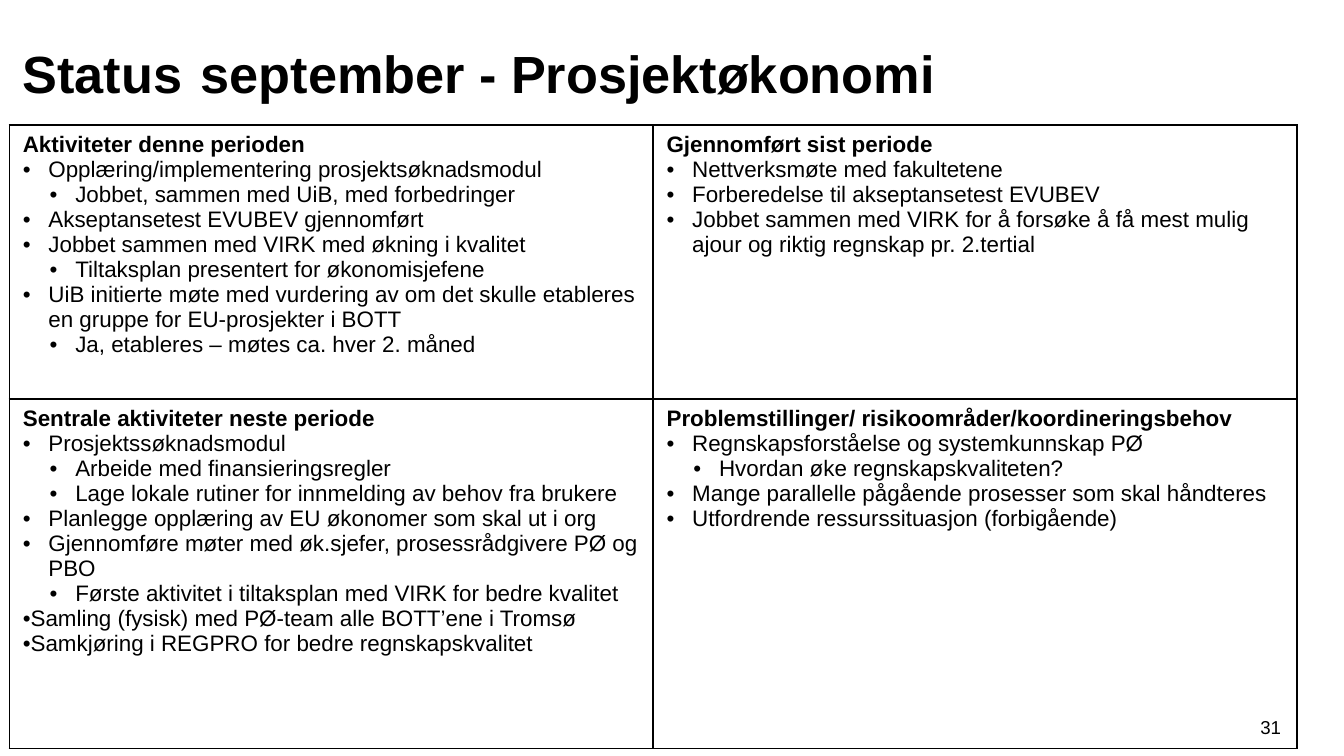
from lxml import etree
from pptx import Presentation
from pptx.dml.color import RGBColor
from pptx.enum.text import MSO_ANCHOR, PP_ALIGN
from pptx.oxml.ns import qn
from pptx.util import Inches, Pt

MIDDLE = MSO_ANCHOR.MIDDLE
CENTER = PP_ALIGN.CENTER
BLACK = "000000"
# Bullet kind: level, left margin, first-line indent
BULLETS = {
    "main": (0, 0.19, -0.19),
    "sub": (1, 0.39, -0.19),
    "flush": (0, 0, -0.3),
}
CELLS = [
    [
        ("Aktiviteter denne perioden", [
            ("main", "Opplæring/implementering prosjektsøknadsmodul"),
            ("sub", "Jobbet, sammen med UiB, med forbedringer"),
            ("main", "Akseptansetest EVUBEV gjennomført"),
            ("main", "Jobbet sammen med VIRK med økning i kvalitet"),
            ("sub", "Tiltaksplan presentert for økonomisjefene"),
            ("main", "UiB initierte møte med vurdering av om det skulle "
                     "etableres en gruppe for EU-prosjekter i BOTT"),
            ("sub", "Ja, etableres – møtes ca. hver 2. måned"),
        ]),
        ("Gjennomført sist periode", [
            ("main", "Nettverksmøte med fakultetene"),
            ("main", "Forberedelse til akseptansetest EVUBEV"),
            ("main", "Jobbet sammen med VIRK for å forsøke å få mest mulig "
                     "ajour og riktig regnskap pr. 2.tertial"),
        ]),
    ],
    [
        ("Sentrale aktiviteter neste periode", [
            ("main", "Prosjektssøknadsmodul"),
            ("sub", "Arbeide med finansieringsregler"),
            ("sub", "Lage lokale rutiner for innmelding av behov fra brukere"),
            ("main", "Planlegge opplæring av EU økonomer som skal ut i org"),
            ("main", "Gjennomføre møter med øk.sjefer, prosessrådgivere PØ "
                     "og PBO"),
            ("sub", "Første aktivitet i tiltaksplan med VIRK for bedre "
                    "kvalitet"),
            ("flush", "Samling (fysisk) med PØ-team alle BOTT’ene i Tromsø"),
            ("flush", "Samkjøring i REGPRO for bedre regnskapskvalitet"),
        ]),
        ("Problemstillinger/ risikoområder/koordineringsbehov", [
            ("main", "Regnskapsforståelse og systemkunnskap PØ"),
            ("sub", "Hvordan øke regnskapskvaliteten?"),
            ("main", "Mange parallelle pågående prosesser som skal håndteres"),
            ("main", "Utfordrende ressurssituasjon (forbigående)"),
        ]),
    ],
]


def style(font, size, bold=False):
    font.name, font.size, font.bold = "Arial", Pt(size), bold
    font.color.rgb = RGBColor.from_string(BLACK)


def border(cell):
    """Draw a 1 pt line on all four sides of the cell."""
    props = cell._tc.get_or_add_tcPr()
    for i, side in enumerate(("a:lnL", "a:lnR", "a:lnT", "a:lnB")):
        line = etree.Element(qn(side), w=str(Pt(1)))
        fill = etree.SubElement(line, qn("a:solidFill"))
        etree.SubElement(fill, qn("a:srgbClr"), val=BLACK)
        props.insert(i, line)


deck = Presentation()
deck.slide_width = Inches(10)
deck.slide_height = Inches(10) * 9 // 16
slide = deck.slides.add_slide(deck.slide_layouts[6])

# Page number
box = slide.shapes.add_textbox(
    Inches(9.27), Inches(5.26), Inches(0.37), Inches(0.3))
frame = box.text_frame
frame.vertical_anchor = MIDDLE
frame.margin_left = frame.margin_right = 0
frame.word_wrap = True
para = frame.paragraphs[0]
para.text, para.alignment = "31", CENTER
style(para.font, 10)

# Title
box = slide.shapes.add_textbox(
    Inches(0.07), Inches(0.14), Inches(9.17), Inches(0.71))
frame = box.text_frame
frame.word_wrap = True
frame.vertical_anchor = MIDDLE
para = frame.paragraphs[0]
for text, size in (("Status", 28), (" ", 36),
                   ("september - Prosjektøkonomi", 28)):
    run = para.add_run()
    run.text = text
    style(run.font, size, True)

# Status table
table = slide.shapes.add_table(
    2, 2, Inches(0.07), Inches(0.93), Inches(9.58), Inches(4.64)).table
table.first_row = table.horz_banding = False
for col in table.columns:
    col.width = Inches(4.79)
for row, high in zip(table.rows, (2.04, 2.6)):
    row.height = Inches(high)

for r, line in enumerate(CELLS):
    for c, (head, items) in enumerate(line):
        cell = table.cell(r, c)
        cell.fill.background()
        border(cell)
        frame = cell.text_frame
        para = frame.paragraphs[0]
        para.text = head
        style(para.font, 12, True)
        for kind, text in items:
            level, left, indent = BULLETS[kind]
            para = frame.add_paragraph()
            para.text, para.level = text, level
            props = para._p.get_or_add_pPr()
            props.set("marL", str(Inches(left)))
            props.set("indent", str(Inches(indent)))
            etree.SubElement(props, qn("a:buFont"), typeface="Arial")
            etree.SubElement(props, qn("a:buChar"), char="•")
            style(para.font, 12)

deck.save("out.pptx")
